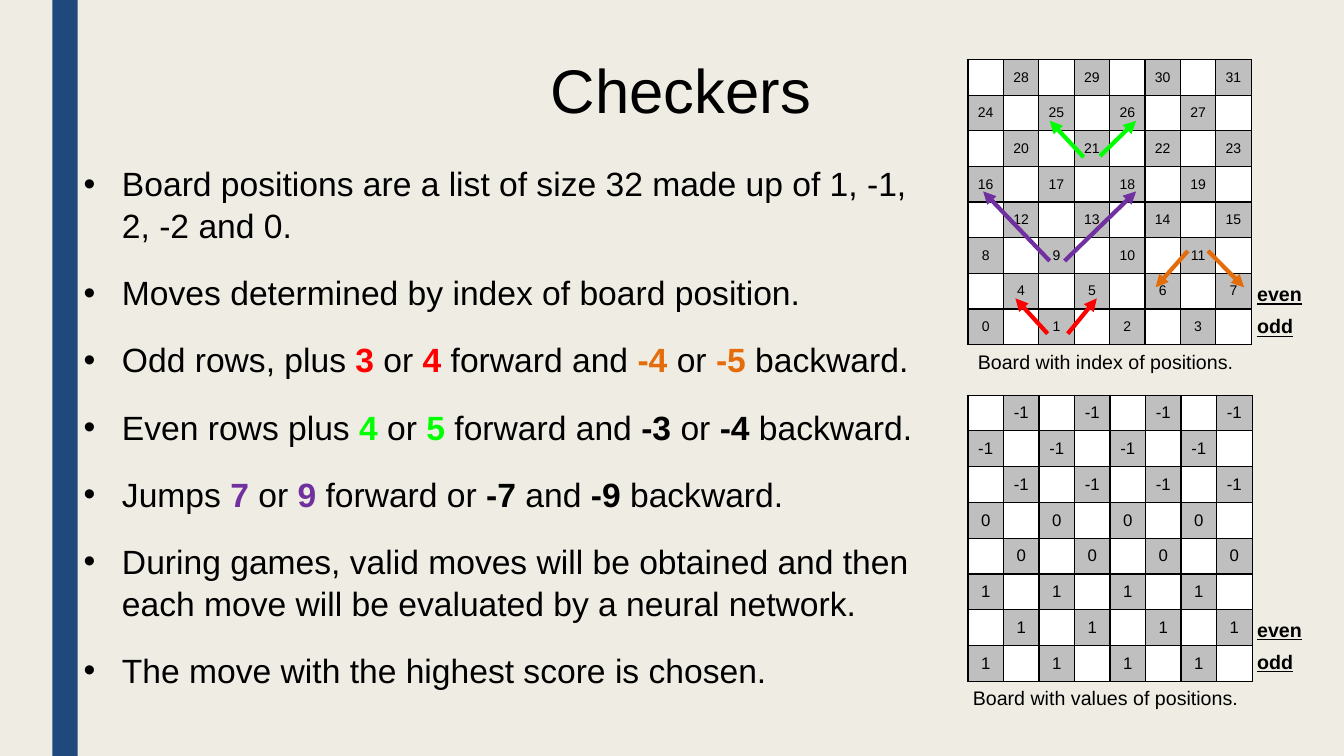
"""Build the Checkers slide: rules of movement beside two annotated boards."""
from lxml.etree import SubElement
from pptx import Presentation
from pptx.dml.color import RGBColor
from pptx.enum.shapes import MSO_CONNECTOR as Connector, MSO_SHAPE as Shape
from pptx.enum.text import MSO_ANCHOR as Anchor, MSO_AUTO_SIZE as AutoSize, PP_ALIGN as Align
from pptx.oxml.ns import qn
from pptx.util import Inches, Pt

BLACK, WHITE, GREY = "000000", "FFFFFF", "BFBFBF"
RED, ORANGE, GREEN, PURPLE = "FF0000", "E46C0A", "00FF00", "7030A0"
BACKGROUND, BAR = "EFEDE3", "1F497D"
FONT = "Arial"

TITLE = "Checkers"
BULLETS = [
    ["Board positions are a list of size 32 made up of 1, -1, 2, -2 and 0."],
    ["Moves determined by index of board position."],
    ["Odd rows, plus ", ("3", RED), " or ", ("4", RED), " forward and ",
     ("-4", ORANGE), " or ", ("-5", ORANGE), " backward."],
    ["Even rows plus ", ("4", GREEN), " or ", ("5", GREEN), " forward and ",
     ("-3", BLACK), " or ", ("-4", BLACK), " backward."],
    ["Jumps ", ("7", PURPLE), " or ", ("9", PURPLE), " forward or ",
     ("-7", BLACK), " and ", ("-9", BLACK), " backward."],
    ["During games, valid moves will be obtained and then each move will be "
     "evaluated by a neural network."],
    ["The move with the highest score is chosen."],
]
SIZE = 8
INDEXES = [[4 * (SIZE - 1 - row) + column // 2 for column in range(SIZE)] for row in range(SIZE)]
VALUES = [[value] * SIZE for value in (-1, -1, -1, 0, 0, 1, 1, 1)]
BOARDS = [
    {"cells": INDEXES, "top": 0.59, "side": (2.81, 2.83), "points": 10,
     "caption": "Board with index of positions.", "caption_left": 9.6},
    {"cells": VALUES, "top": 3.92, "side": (2.82, 2.84), "points": 12,
     "caption": "Board with values of positions.", "caption_left": 9.55},
]
BOARD_LEFT = 9.6
ROW_LABELS = [("even", 2.16, 0.76), ("odd", 2.48, 0.6)]
MOVES = [
    (RED, (2.25, 7.69), (1.34, 6.7)),
    (RED, (2.82, 7.69), (3.64, 6.7)),
    (ORANGE, (6.21, 5.37), (5.3, 6.39)),
    (ORANGE, (6.78, 5.37), (7.8, 6.39)),
    (PURPLE, (2.31, 5.65), (0.43, 3.7)),
    (PURPLE, (2.73, 5.65), (4.75, 3.7)),
    (GREEN, (3.27, 2.74), (2.31, 1.72)),
    (GREEN, (3.73, 2.71), (4.75, 1.72)),
]


def rgb(value):
    return RGBColor.from_string(value)


def inches(*lengths):
    return [Inches(length) for length in lengths]


def add_run(paragraph, text, points, color=BLACK, bold=False, underline=False):
    run = paragraph.add_run()
    run.text = text
    font = run.font
    font.name, font.size, font.bold, font.underline = FONT, Pt(points), bold, underline
    font.color.rgb = rgb(color)


def place(placeholder, *box):
    placeholder.left, placeholder.top, placeholder.width, placeholder.height = inches(*box)
    frame = placeholder.text_frame
    frame.margin_left = frame.margin_right = frame.margin_top = frame.margin_bottom = 0
    frame.vertical_anchor = Anchor.MIDDLE
    frame.auto_size = AutoSize.NONE
    frame.word_wrap = True
    return frame


def add_bullets(frame):
    for number, pieces in enumerate(BULLETS):
        paragraph = frame.add_paragraph() if number else frame.paragraphs[0]
        paragraph.alignment = Align.LEFT
        paragraph.line_spacing = 1.04
        paragraph.space_before, paragraph.space_after = Pt(0), Pt(18)
        properties = paragraph._p.get_or_add_pPr()
        properties.set("marL", str(Inches(0.38)))
        properties.set("indent", str(Inches(-0.38)))
        SubElement(properties, qn("a:buFont"), typeface=FONT)
        SubElement(properties, qn("a:buChar"), char="•")
        for piece in pieces:
            if isinstance(piece, tuple):
                add_run(paragraph, piece[0], 24, piece[1], bold=True)
            else:
                add_run(paragraph, piece, 24)


def add_label(slide, text, left, top, width, **style):
    box = slide.shapes.add_textbox(*inches(left, top, width, 0.34))
    box.text_frame.word_wrap = True
    box.text_frame.auto_size = AutoSize.SHAPE_TO_FIT_TEXT
    add_run(box.text_frame.paragraphs[0], text, 14, **style)


def format_cell(cell, dark, text, points):
    cell.margin_left, cell.margin_right, cell.margin_top, cell.margin_bottom = inches(
        0.09, 0.09, 0.04, 0.04)
    cell.vertical_anchor = Anchor.MIDDLE
    properties = cell._tc.get_or_add_tcPr()
    for side in ("lnL", "lnR", "lnT", "lnB"):
        border = SubElement(properties, qn(f"a:{side}"), w=str(Pt(1)))
        fill = SubElement(border, qn("a:solidFill"))
        SubElement(fill, qn("a:srgbClr"), val=BLACK)
    cell.fill.solid()
    cell.fill.fore_color.rgb = rgb(GREY if dark else WHITE)
    paragraph = cell.text_frame.paragraphs[0]
    paragraph.alignment = Align.CENTER
    if dark:
        add_run(paragraph, text, points)
    else:
        SubElement(paragraph._p, qn("a:endParaRPr"), sz=str(points * 100))


def add_board(slide, board):
    width, height = board["side"]
    frame = slide.shapes.add_table(
        SIZE, SIZE, *inches(BOARD_LEFT, board["top"], width, height))
    table = frame.table
    table.first_row = table.horz_banding = False
    for column in table.columns:
        column.width = Inches(width / SIZE)
    for row in table.rows:
        row.height = Inches(height / SIZE)
    for row, numbers in enumerate(board["cells"]):
        for column, number in enumerate(numbers):
            dark = (row + column) % 2 == 1
            format_cell(table.cell(row, column), dark, str(number), board["points"])
    add_label(slide, board["caption"], board["caption_left"], board["top"] + height, 2.9)
    for text, offset, label_width in ROW_LABELS:
        add_label(slide, text, 12.37, board["top"] + offset, label_width,
                  bold=True, underline=True)


def add_move(slide, board, color, start, end):
    width, height = board["side"]
    points = [length for column, row in (start, end) for length in inches(
        BOARD_LEFT + column * width / SIZE, board["top"] + row * height / SIZE)]
    arrow = slide.shapes.add_connector(Connector.STRAIGHT, *points)
    arrow.line.color.rgb = rgb(color)
    arrow.line.width = Pt(3)
    SubElement(arrow.line._get_or_add_ln(), qn("a:tailEnd"), type="triangle")
    SubElement(arrow._element.spPr, qn("a:effectLst"))


def main():
    presentation = Presentation()
    presentation.slide_width, presentation.slide_height = inches(13.33, 7.5)
    slide = presentation.slides.add_slide(presentation.slide_layouts[0])
    slide.background.fill.solid()
    slide.background.fill.fore_color.rgb = rgb(BACKGROUND)

    bar = slide.shapes.add_shape(Shape.RECTANGLE, *inches(0.52, 0, 0.25, 7.5))
    bar.shadow.inherit = False
    bar.fill.solid()
    bar.fill.fore_color.rgb = rgb(BAR)
    bar.line.fill.background()

    title = place(slide.shapes.title, 0.85, 0.3, 11.81, 1.25).paragraphs[0]
    title.alignment = Align.CENTER
    title.line_spacing = 0.9
    add_run(title, TITLE, 44)
    add_bullets(place(slide.placeholders[1], 0.83, 1.36, 8.28, 5.73))

    for board in BOARDS:
        add_board(slide, board)
    for move in MOVES:
        add_move(slide, BOARDS[0], *move)
    presentation.save("out.pptx")


if __name__ == "__main__":
    main()
